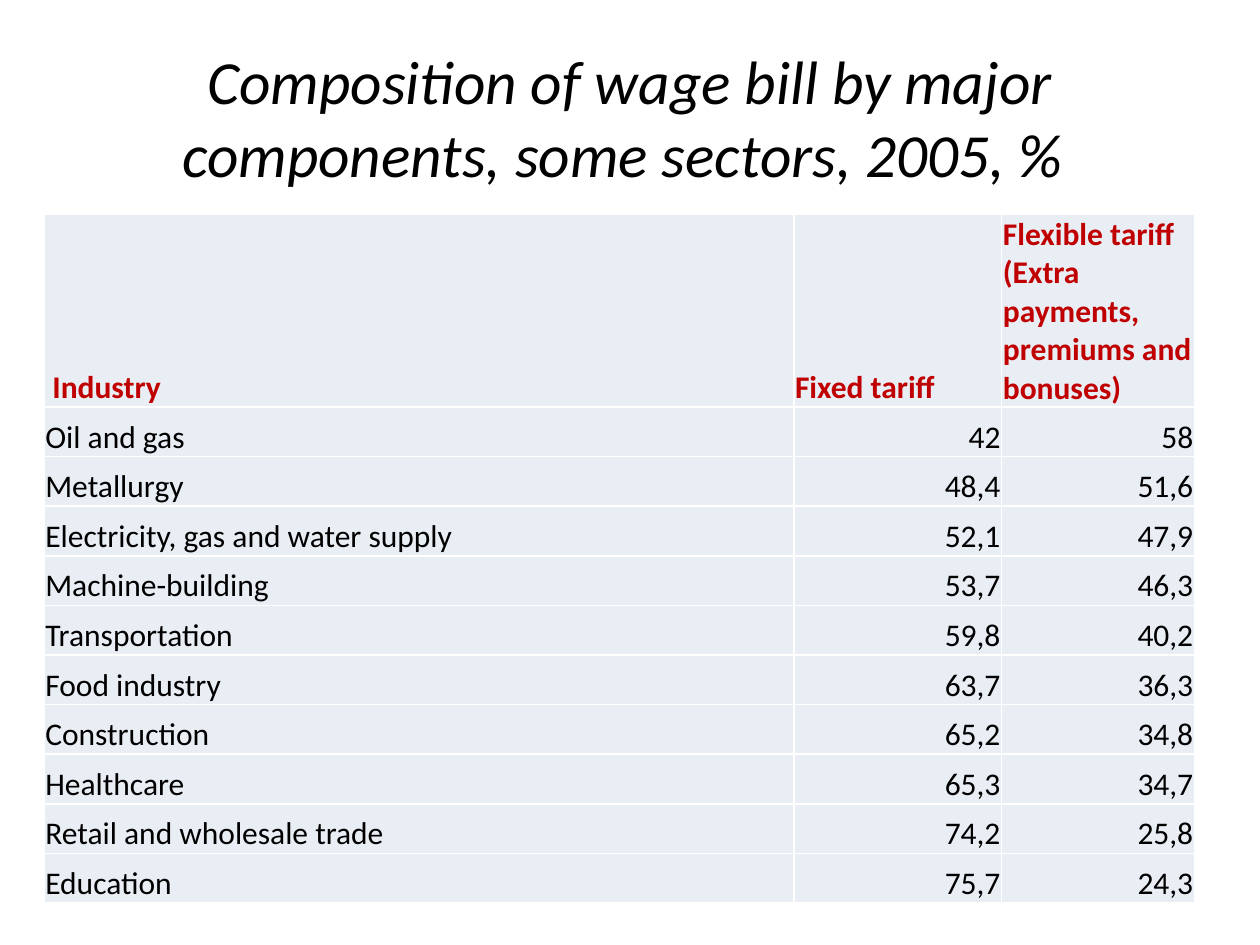
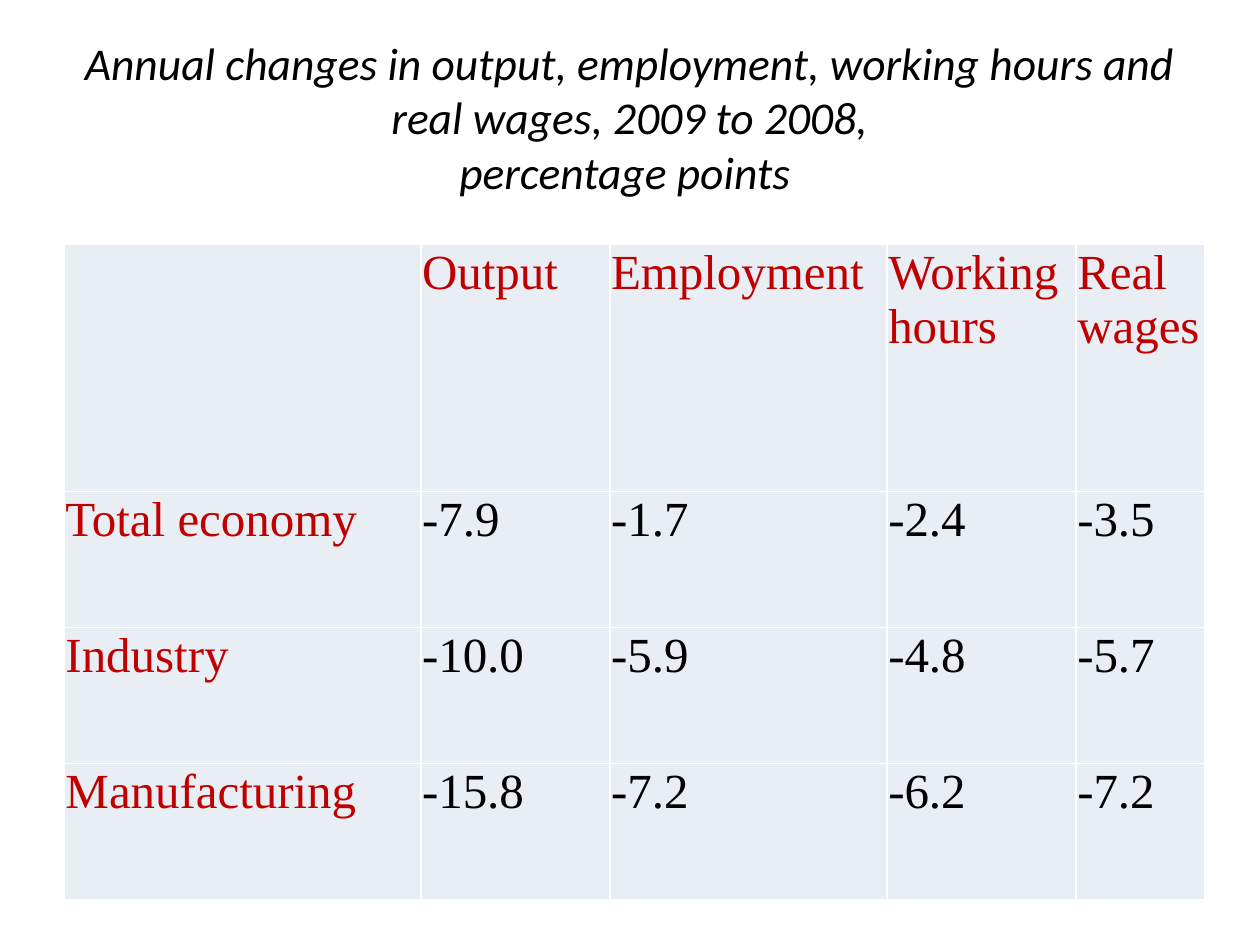
import dataclasses

import lxml.etree
import pptx
import pptx.dml.color
import pptx.enum.text
import pptx.oxml.ns
import pptx.util

Inches = pptx.util.Inches
Align = pptx.enum.text.PP_ALIGN
Anchor = pptx.enum.text.MSO_ANCHOR

# Shared look
BLACK, RED, WHITE, CELL_FILL = "000000", "C00000", "FFFFFF", "E9EDF4"
TITLE_FONT = "Calibri"
TITLE_BOX = (0.5, 0.3, 9, 1.25)
BORDER_WIDTH = pptx.util.Pt(1)


@dataclasses.dataclass
class TableStyle:
    font: str
    size: float
    anchor: Anchor
    number_align: Align
    bold_header: bool
    red_labels: bool


@dataclasses.dataclass
class TableSlide:
    title_lines: list[str]
    title_size: float
    left: float
    top: float
    height: float
    header_height: float
    column_widths: list[float]
    rows: list[tuple[str, ...]]
    style: TableStyle


WAGE_BILL = TableSlide(
    title_lines=["Composition of wage bill by major components, some sectors, 2005, % "],
    title_size=35,
    left=0.35, top=1.7, height=5.47, header_height=1.53,
    column_widths=[5.95, 1.65, 1.53],
    rows=[
        (" Industry", "Fixed tariff", "Flexible tariff (Extra payments, premiums and bonuses)"),
        ("Oil and gas", "42", "58"),
        ("Metallurgy", "48,4", "51,6"),
        ("Electricity, gas and water supply", "52,1", "47,9"),
        ("Machine-building", "53,7", "46,3"),
        ("Transportation", "59,8", "40,2"),
        ("Food industry", "63,7", "36,3"),
        ("Construction", "65,2", "34,8"),
        ("Healthcare", "65,3", "34,7"),
        ("Retail and wholesale trade", "74,2", "25,8"),
        ("Education", "75,7", "24,3"),
    ],
    style=TableStyle("Calibri", 18, Anchor.BOTTOM, Align.RIGHT, bold_header=True, red_labels=False),
)

ANNUAL_CHANGES = TableSlide(
    title_lines=[
        "Annual changes in output, employment, working hours and real wages, 2009 to 2008,",
        "percentage points ",
    ],
    title_size=26,
    left=0.51, top=1.94, height=5.2, header_height=1.96,
    column_widths=[2.83, 1.5, 2.2, 1.5, 1.02],
    rows=[
        ("", "Output", "Employment", "Working hours", "Real wages"),
        ("Total economy", "-7.9", "-1.7", "-2.4", "-3.5"),
        ("Industry", "-10.0", "-5.9", "-4.8", "-5.7"),
        ("Manufacturing", "-15.8", "-7.2", "-6.2", "-7.2"),
    ],
    style=TableStyle("Times New Roman", 28, Anchor.TOP, Align.LEFT, bold_header=False, red_labels=True),
)


def rgb(color: str) -> pptx.dml.color.RGBColor:
    return pptx.dml.color.RGBColor.from_string(color)


def add_run(paragraph, text: str, font: str, size: float, color: str,
            bold: bool = False, italic: bool = False) -> None:
    run = paragraph.add_run()
    run.text = text
    run.font.name = font
    run.font.size = pptx.util.Pt(size)
    run.font.color.rgb = rgb(color)
    run.font.bold = bold
    run.font.italic = italic


def add_title(slide, lines: list[str], size: float) -> None:
    text_frame = slide.shapes.add_textbox(*map(Inches, TITLE_BOX)).text_frame
    text_frame.word_wrap = True
    text_frame.vertical_anchor = Anchor.MIDDLE
    paragraph = text_frame.paragraphs[0]
    paragraph.alignment = Align.CENTER
    for index, line in enumerate(lines):
        if index:
            paragraph.add_line_break()
        add_run(paragraph, line, TITLE_FONT, size, BLACK, italic=True)


def add_borders(cell) -> None:
    """Put white lines on all four sides; they must come before the fill."""
    properties = cell._tc.get_or_add_tcPr()
    qualified = pptx.oxml.ns.qn
    for position, side in enumerate(("a:lnL", "a:lnR", "a:lnT", "a:lnB")):
        line = lxml.etree.Element(qualified(side), w=str(BORDER_WIDTH))
        fill = lxml.etree.SubElement(line, qualified("a:solidFill"))
        lxml.etree.SubElement(fill, qualified("a:srgbClr"), val=WHITE)
        properties.insert(position, line)


def fill_cell(cell, text: str, style: TableStyle, is_header: bool, is_label: bool) -> None:
    cell.fill.solid()
    cell.fill.fore_color.rgb = rgb(CELL_FILL)
    add_borders(cell)
    cell.margin_left = cell.margin_right = cell.margin_top = Inches(0.01)
    cell.margin_bottom = 0
    cell.vertical_anchor = style.anchor
    if not text:
        return
    paragraph = cell.text_frame.paragraphs[0]
    paragraph.alignment = Align.LEFT if is_header or is_label else style.number_align
    is_red = is_header or (is_label and style.red_labels)
    add_run(paragraph, text, style.font, style.size, RED if is_red else BLACK,
            bold=is_header and style.bold_header)


def add_data_table(slide, content: TableSlide) -> None:
    rows, widths = content.rows, content.column_widths
    table = slide.shapes.add_table(
        len(rows), len(widths), Inches(content.left), Inches(content.top),
        Inches(sum(widths)), Inches(content.height)).table
    table.first_row = table.horz_banding = False
    for column, width in zip(table.columns, widths):
        column.width = Inches(width)

    # Body rows share the height below the header equally
    body_height = (content.height - content.header_height) / (len(rows) - 1)
    for row_index, texts in enumerate(rows):
        row = table.rows[row_index]
        row.height = Inches(body_height if row_index else content.header_height)
        for column_index, text in enumerate(texts):
            fill_cell(row.cells[column_index], text, content.style,
                      is_header=row_index == 0, is_label=column_index == 0)


def main() -> None:
    presentation = pptx.Presentation()
    presentation.slide_width = Inches(10)
    presentation.slide_height = Inches(7.5)
    for content in (WAGE_BILL, ANNUAL_CHANGES):
        slide = presentation.slides.add_slide(presentation.slide_layouts[6])
        add_title(slide, content.title_lines, content.title_size)
        add_data_table(slide, content)
    presentation.save("out.pptx")


if __name__ == "__main__":
    main()
